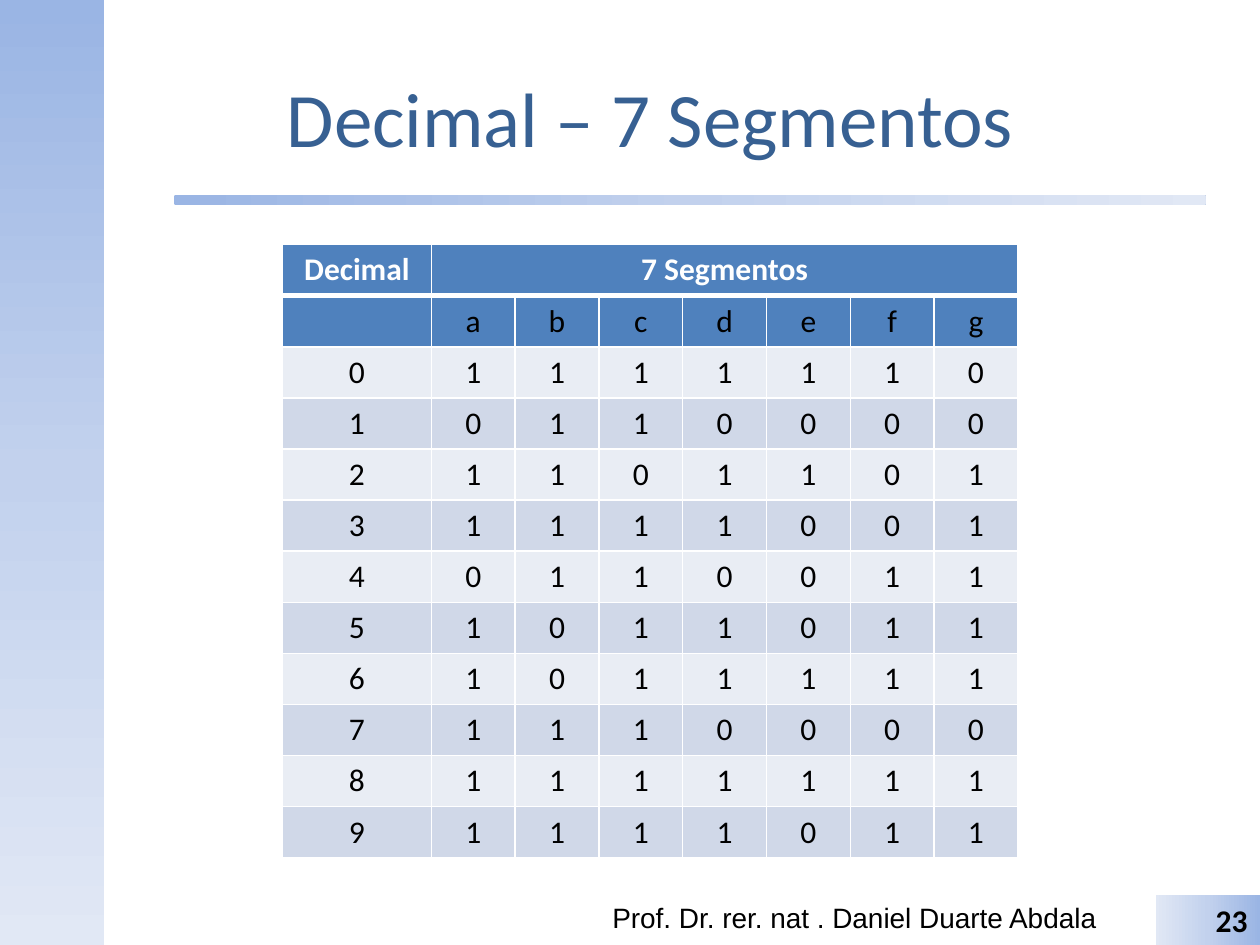
from copy import deepcopy

from lxml import etree
from pptx import Presentation
from pptx.dml.color import RGBColor
from pptx.enum.shapes import MSO_SHAPE
from pptx.enum.text import MSO_ANCHOR, PP_ALIGN
from pptx.oxml.ns import qn
from pptx.util import Pt

RECT, ROUND = MSO_SHAPE.RECTANGLE, MSO_SHAPE.ROUNDED_RECTANGLE
LEFT, CENTER, RIGHT = PP_ALIGN.LEFT, PP_ALIGN.CENTER, PP_ALIGN.RIGHT
TOP, MIDDLE = MSO_ANCHOR.TOP, MSO_ANCHOR.MIDDLE

COLORS = {
    "title": "376092", "text": "000000", "white": "FFFFFF",
    "head": "4F81BD", "light": "E9EDF4", "dark": "D0D8E8",
}
FADE = [(0, "9AB5E4"), (0.5, "C2D1ED"), (1, "E1E8F5")]

# Segments a to g for the digits 0 to 9
DIGITS = ["1111110", "0110000", "1101101", "1111001", "0110011",
          "1011011", "1011111", "1110000", "1111111", "1111011"]


class Deck:
    def __init__(self, width, height):
        self.prs = Presentation()
        self.prs.slide_width, self.prs.slide_height = Pt(width), Pt(height)
        self.slide = self.prs.slides.add_slide(self.prs.slide_layouts[6])
        self.font = "Calibri"

    def add_run(self, frame, text, size=18, color="text", bold=False,
                align=CENTER, font=None):
        para = frame.paragraphs[0]
        para.alignment = align
        run = para.add_run()
        run.text = text
        run.font.name = font or self.font
        run.font.size = Pt(size)
        run.font.bold = bold
        run.font.color.rgb = RGBColor.from_string(COLORS[color])

    def bar(self, kind, box, angle):
        """Add a borderless shape that fades along angle, counter-clockwise."""
        shape = self.slide.shapes.add_shape(kind, *map(Pt, box))
        shape.shadow.inherit = False
        shape.line.fill.background()
        fill = shape.fill
        fill.gradient()
        stops = shape._element.spPr.find(qn("a:gradFill")).find(qn("a:gsLst"))
        stops.append(deepcopy(stops[0]))
        for stop, (place, color) in zip(fill.gradient_stops, FADE):
            stop.position = place
            stop.color.rgb = RGBColor.from_string(color)
        fill.gradient_angle = angle
        return shape

    def label(self, box, text, anchor=TOP, **style):
        frame = self.slide.shapes.add_textbox(*map(Pt, box)).text_frame
        frame.word_wrap = True
        frame.vertical_anchor = anchor
        self.add_run(frame, text, **style)

    def edge(self, cell, side, width):
        props = cell._tc.get_or_add_tcPr()
        line = etree.Element(qn(f"a:ln{side}"), w=str(Pt(width)))
        fill = etree.SubElement(line, qn("a:solidFill"))
        etree.SubElement(fill, qn("a:srgbClr"), val=COLORS["white"])
        props.insert("LRTB".index(side), line)

    def cell(self, cell, fill, top=1, bottom=1):
        for side, width in zip("LRTB", (1, 1, top, bottom)):
            self.edge(cell, side, width)
        cell.fill.solid()
        cell.fill.fore_color.rgb = RGBColor.from_string(COLORS[fill])

    def table(self, left, top, widths, height, rows):
        count = len(rows)
        box = (left, top, sum(widths), height * count)
        table = self.slide.shapes.add_table(
            count, len(widths), *map(Pt, box)).table
        table.first_row = table.horz_banding = False
        for col, width in zip(table.columns, widths):
            col.width = Pt(width)
        for r, row in enumerate(rows):
            table.rows[r].height = Pt(height)
            fill = "head" if r < 2 else ("light", "dark")[r % 2]
            for c, text in enumerate(row):
                cell = table.cell(r, c)
                self.cell(cell, fill, top=3 if r == 1 else 1,
                          bottom=3 if r == 0 else 1)
                if text:
                    self.add_run(cell.text_frame, text, bold=r == 0,
                                 color="text" if r else "white")
        table.cell(0, 1).merge(table.cell(0, len(widths) - 1))


def main():
    deck = Deck(720, 540)
    deck.bar(RECT, (0, 0, 59.5, 540), 270)
    deck.bar(ROUND, (99.4, 111.5, 589.5, 5.6), 0)
    deck.label((59.5, 21.6, 624.5, 90), "Decimal – 7 Segmentos", MIDDLE,
               size=44, color="title")

    rows = [["Decimal", "7 Segmentos"] + [""] * 6, ["", *"abcdefg"]]
    rows += [[str(n), *bits] for n, bits in enumerate(DIGITS)]
    deck.table(161.5, 139.8, [85] + [47.9] * 7, 29.2, rows)

    deck.label((342.8, 511.2, 301.7, 28.8),
               "Prof. Dr. rer. nat . Daniel Duarte Abdala",
               size=16, align=LEFT, font="Arial")
    page = deck.bar(RECT, (660.5, 511.2, 59.5, 28.8), 180)
    page.text_frame.vertical_anchor = MIDDLE
    deck.add_run(page.text_frame, "23", bold=True, align=RIGHT)
    deck.prs.save("out.pptx")


if __name__ == "__main__":
    main()
